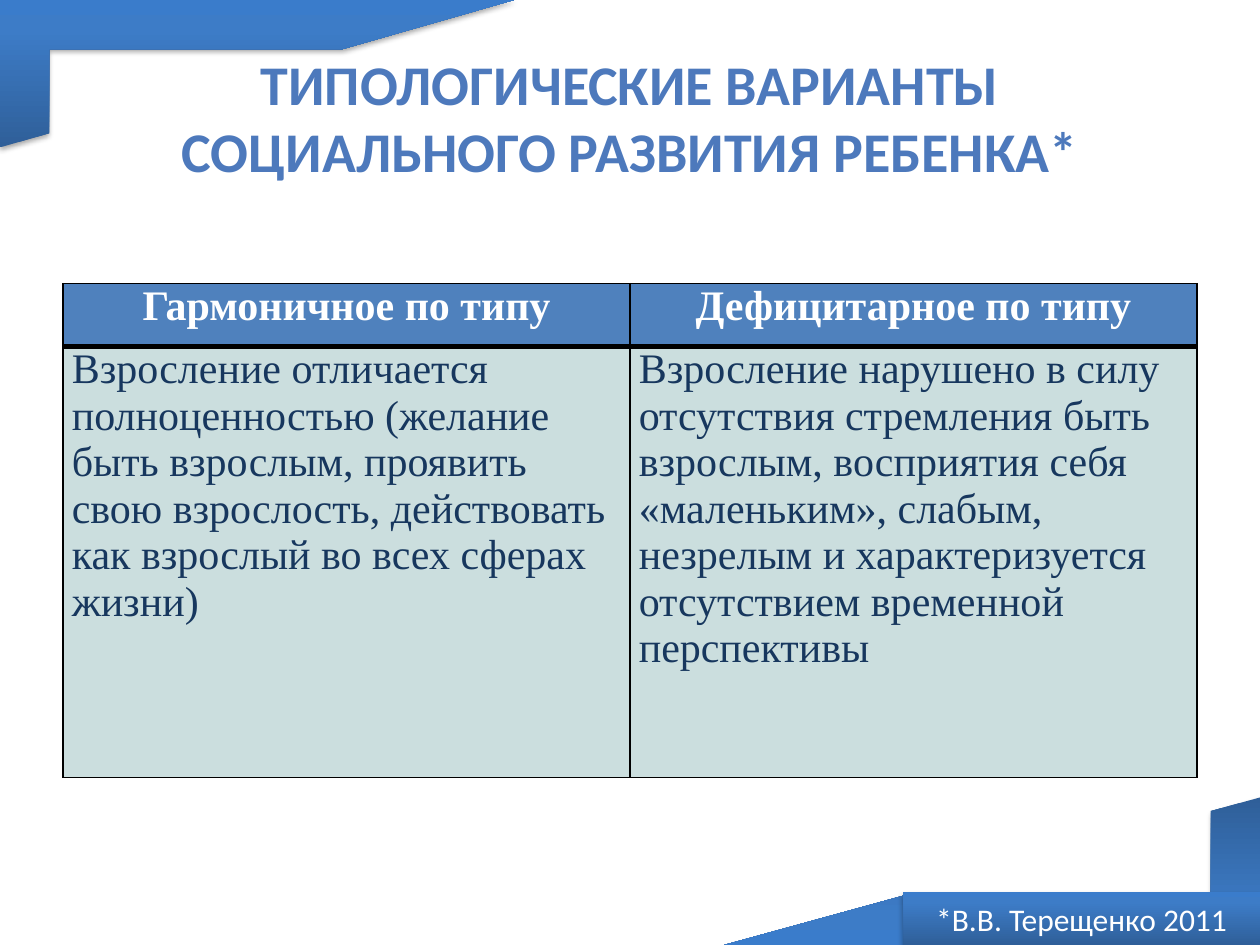
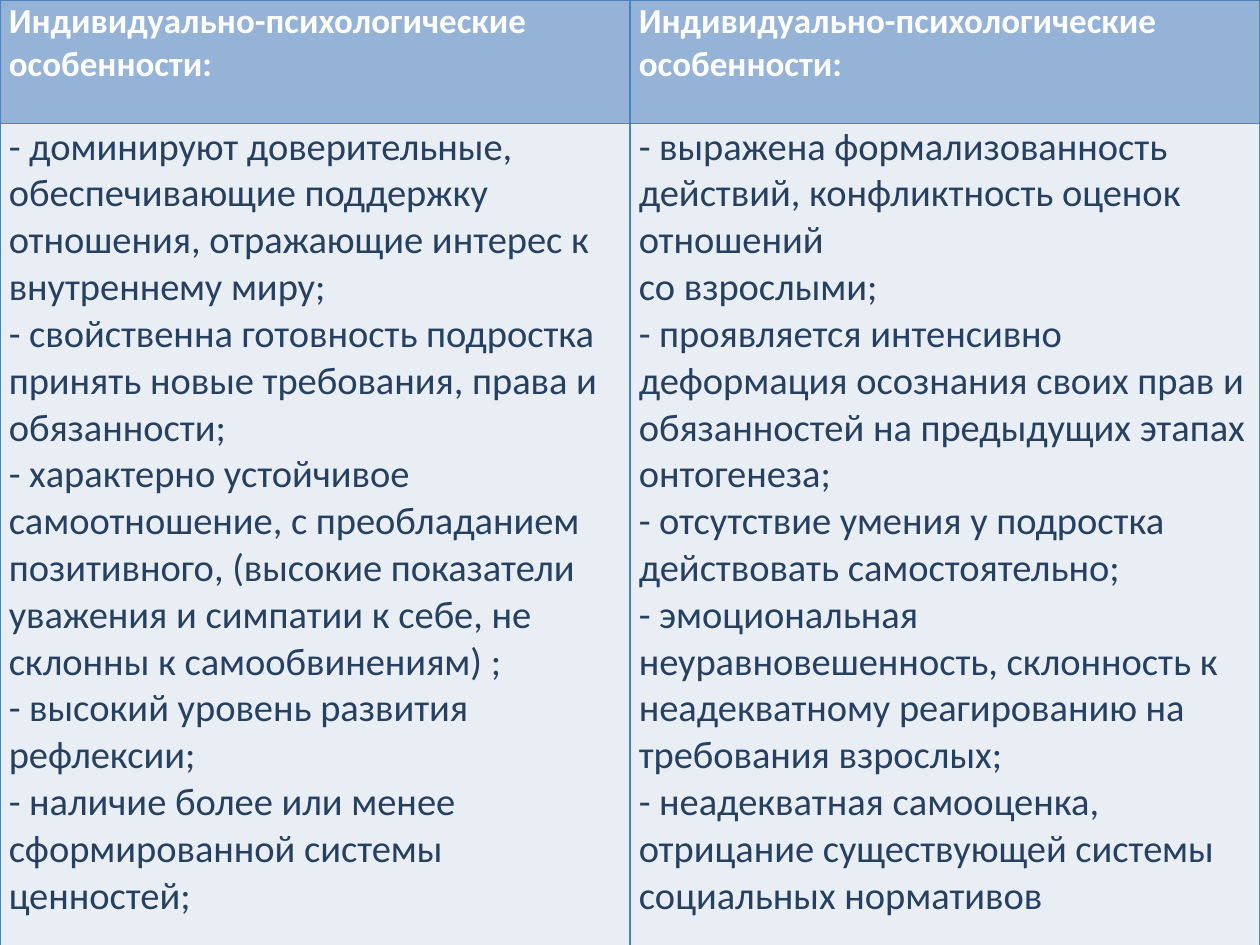
from dataclasses import dataclass
from typing import Optional

from lxml import etree
from pptx import Presentation
from pptx import util as u
from pptx.dml.color import RGBColor
from pptx.enum import shapes, text
from pptx.oxml import parse_xml
from pptx.oxml.ns import nsdecls, qn

# Shared look
COLORS = {
    "title": "4D79BC", "white": "FFFFFF", "black": "000000",
    "frame_dark": "2F5F99", "frame_mid": "3D7CC7", "frame_light": "3A7CCB",
    "type_header": "4F81BD", "type_body": "CBDEDE", "type_text": "17375E",
    "traits_line": "4F81BD", "traits_header": "95B3D7",
    "traits_body": "E9EDF4", "traits_text": "254061",
}
FRAME_STOPS = [(0, "frame_dark"), (80, "frame_mid"), (100, "frame_light")]
SANS, SERIF = "Calibri", "Times New Roman"


@dataclass
class Box:
    left: float
    top: float
    width: float
    height: float

    def lengths(self) -> list:
        return [u.Inches(v) for v in (self.left, self.top, self.width, self.height)]


@dataclass
class TextStyle:
    font: str
    size: int
    color: str
    bold: bool = False
    align: Optional[text.PP_ALIGN] = None


@dataclass
class RowStyle:
    height: float
    fill: str
    text: TextStyle
    borders: dict[str, float]


@dataclass
class Band:
    kind: shapes.MSO_SHAPE
    box: Box
    flipped: bool = False


def write_paragraphs(frame, lines: list[str], style: TextStyle) -> None:
    for index, line in enumerate(lines):
        paragraph = frame.paragraphs[0] if index == 0 else frame.add_paragraph()
        paragraph.text = line
        paragraph.alignment = style.align
        paragraph.font.name = style.font
        paragraph.font.size = u.Pt(style.size)
        paragraph.font.bold = style.bold
        paragraph.font.color.rgb = RGBColor.from_string(COLORS[style.color])


def add_title(slide, title: str) -> None:
    frame = slide.shapes.add_textbox(*Box(0.5, 0.3, 9, 1.25).lengths()).text_frame
    frame.word_wrap = True
    frame.vertical_anchor = text.MSO_ANCHOR.MIDDLE
    write_paragraphs(frame, [title], TextStyle(SANS, 32, "title", True, text.PP_ALIGN.CENTER))


def add_band(slide, band: Band):
    """Add a blue shape with a vertical gradient and a soft shadow."""
    shape = slide.shapes.add_shape(band.kind, *band.box.lengths())
    shape.line.fill.background()
    properties = shape._element.spPr
    if band.flipped:
        transform = properties.find(qn("a:xfrm"))
        transform.set("flipH", "1")
        transform.set("flipV", "1")
    stops = "".join(
        f'<a:gs pos="{position * 1000}"><a:srgbClr val="{COLORS[color]}"/></a:gs>'
        for position, color in FRAME_STOPS)
    properties.find(qn("a:prstGeom")).addnext(parse_xml(
        f'<a:gradFill {nsdecls("a")} rotWithShape="1"><a:gsLst>{stops}</a:gsLst>'
        '<a:lin ang="16200000" scaled="0"/></a:gradFill>'))
    properties.append(parse_xml(
        f'<a:effectLst {nsdecls("a")}><a:outerShdw blurRad="{u.Pt(3.1)}" '
        f'dist="{u.Pt(1.8)}" dir="5400000" rotWithShape="0">'
        f'<a:srgbClr val="{COLORS["black"]}"><a:alpha val="35000"/></a:srgbClr>'
        '</a:outerShdw></a:effectLst>'))
    return shape


def set_borders(cell, widths: dict[str, float], color: str) -> None:
    properties = cell._tc.get_or_add_tcPr()
    for index, side in enumerate("LRTB"):
        line = etree.Element(qn(f"a:ln{side}"), w=str(u.Pt(widths[side])))
        fill = etree.SubElement(line, qn("a:solidFill"))
        etree.SubElement(fill, qn("a:srgbClr"), val=COLORS[color])
        properties.insert(index, line)


def add_comparison(slide, box: Box, row_styles: list[RowStyle], line_color: str,
                   rows: list[list[list[str]]]) -> None:
    """Add a table whose cells each hold a list of paragraphs."""
    table = slide.shapes.add_table(len(rows), len(rows[0]), *box.lengths()).table
    table.first_row = table.horz_banding = False
    for table_row, style, contents in zip(table.rows, row_styles, rows):
        table_row.height = u.Inches(style.height)
        for cell, lines in zip(table_row.cells, contents):
            cell.margin_left = cell.margin_right = u.Inches(0.07)
            cell.margin_top = cell.margin_bottom = 0
            cell.fill.solid()
            cell.fill.fore_color.rgb = RGBColor.from_string(COLORS[style.fill])
            set_borders(cell, style.borders, line_color)
            write_paragraphs(cell.text_frame, lines, style.text)


def build_types_slide(slide) -> None:
    add_title(slide, "ТИПОЛОГИЧЕСКИЕ ВАРИАНТЫ СОЦИАЛЬНОГО РАЗВИТИЯ РЕБЕНКА*")

    # Corner frames
    for corner in (Band(shapes.MSO_SHAPE.HALF_FRAME, Box(0, 0, 4.08, 1.17)),
                   Band(shapes.MSO_SHAPE.HALF_FRAME, Box(5.75, 6.33, 4.25, 1.17), True)):
        add_band(slide, corner)

    # Types of development
    thin = dict.fromkeys("LRTB", 1)
    header = RowStyle(0.5, "type_header",
                      TextStyle(SERIF, 24, "white", True, text.PP_ALIGN.CENTER),
                      thin | {"B": 3})
    body = RowStyle(3.42, "type_body", TextStyle(SERIF, 24, "type_text"), thin | {"T": 3})
    add_comparison(slide, Box(0.5, 2.25, 9, 3.92), [header, body], "black", [
        [["Гармоничное по типу"], ["Дефицитарное по типу"]],
        [["Взросление отличается полноценностью (желание быть взрослым, проявить "
          "свою взрослость, действовать как взрослый во всех сферах жизни)"],
         ["Взросление нарушено в силу отсутствия стремления быть взрослым, "
          "восприятия себя «маленьким», слабым, незрелым и характеризуется "
          "отсутствием временной перспективы"]],
    ])

    # Source label
    label = add_band(slide, Band(shapes.MSO_SHAPE.RECTANGLE, Box(7.17, 7.08, 2.83, 0.42)))
    label.text_frame.vertical_anchor = text.MSO_ANCHOR.MIDDLE
    write_paragraphs(label.text_frame, ["*В.В. Терещенко 2011"],
                     TextStyle(SANS, 18, "white", align=text.PP_ALIGN.CENTER))


def build_traits_slide(slide) -> None:
    thin = dict.fromkeys("LRTB", 1)
    header = RowStyle(0.98, "traits_header", TextStyle(SANS, 20, "white", True), thin)
    body = RowStyle(7.04, "traits_body", TextStyle(SANS, 22, "traits_text"), thin)
    add_comparison(slide, Box(0, 0, 10, 8.02), [header, body], "traits_line", [
        [["Индивидуально-психологические особенности:"]] * 2,
        [["- доминируют доверительные, обеспечивающие поддержку отношения, "
          "отражающие интерес к внутреннему миру;",
          "- свойственна готовность подростка принять новые требования, права и обязанности;",
          "- характерно устойчивое самоотношение, с преобладанием позитивного, "
          "(высокие показатели уважения и симпатии к себе, не склонны к самообвинениям) ;",
          "- высокий уровень развития рефлексии;",
          "- наличие более или менее сформированной системы ценностей;"],
         ["- выражена формализованность действий, конфликтность оценок отношений",
          "со взрослыми;",
          "- проявляется интенсивно деформация осознания своих прав и обязанностей "
          "на предыдущих этапах онтогенеза;",
          "- отсутствие умения у подростка действовать самостоятельно;",
          "- эмоциональная неуравновешенность, склонность к неадекватному "
          "реагированию на требования взрослых;",
          "- неадекватная самооценка, отрицание существующей системы социальных нормативов"]],
    ])


def main() -> None:
    presentation = Presentation()
    presentation.slide_width = u.Inches(10)
    presentation.slide_height = u.Inches(7.5)
    for build in (build_types_slide, build_traits_slide):
        build(presentation.slides.add_slide(presentation.slide_layouts[6]))
    presentation.save("out.pptx")


if __name__ == "__main__":
    main()
